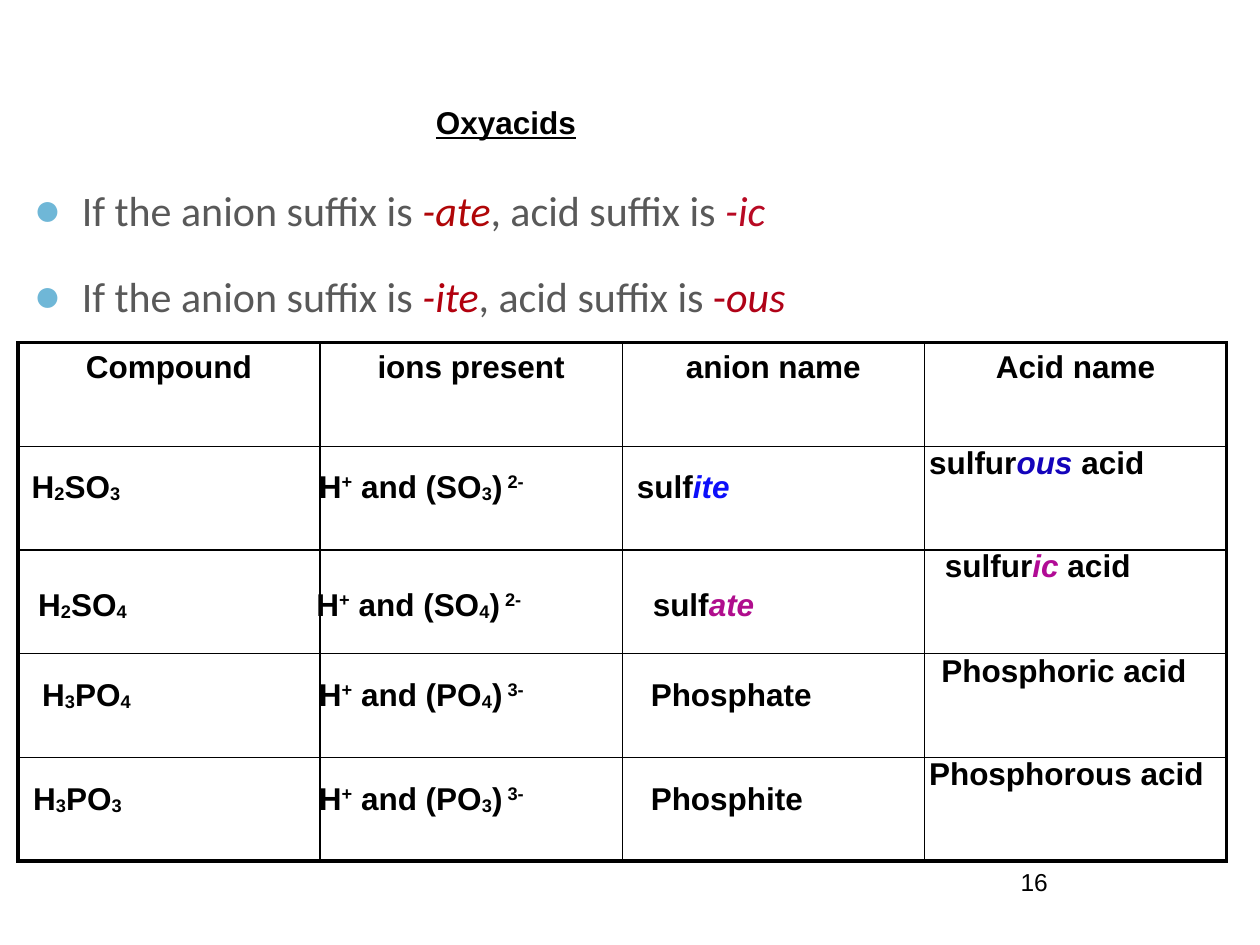
import pptx
import pptx.util
import pptx.dml.color
import pptx.enum.text
import pptx.oxml
import pptx.oxml.ns
from pptx.util import Cm, Pt

RGBColor = pptx.dml.color.RGBColor
ALIGN = pptx.enum.text.PP_ALIGN
BLACK = RGBColor(0x00, 0x00, 0x00)
GREY = RGBColor(0x59, 0x59, 0x59)
RED_ATE = RGBColor(0xB0, 0x06, 0x08)
RED_IC = RGBColor(0xB8, 0x09, 0x23)
RED_ITE = RGBColor(0xB2, 0x00, 0x0E)
RED_OUS = RGBColor(0xB0, 0x02, 0x17)
BULLET_BLUE = RGBColor(0x6F, 0xB7, 0xD7)
BLUE_ITE = RGBColor(0x0D, 0x0F, 0xFA)
BLUE_OUS = RGBColor(0x14, 0x04, 0xBB)
PINK_ATE = RGBColor(0xB0, 0x0D, 0x8D)
PINK_IC = RGBColor(0xB1, 0x0B, 0x95)
SUB, SUP = -6000, 32000
NAMESPACE = pptx.oxml.ns.nsdecls("a")


def add_run(paragraph, text, size=18, font="Arial", color=BLACK,
            bold=True, italic=False, baseline=0):
    run = paragraph.add_run()
    run.text = text
    run.font.size = Pt(size)
    run.font.name = font
    run.font.color.rgb = color
    run.font.bold = bold
    run.font.italic = italic
    if baseline:
        run.font._element.set("baseline", str(baseline))
    return run


def add_label(left, top, width, height):
    """Add a text box with tight insets and return its first paragraph."""
    frame = slide.shapes.add_textbox(Cm(left), Cm(top), Cm(width), Cm(height)).text_frame
    frame.word_wrap = True
    frame.margin_left = frame.margin_right = Cm(0.1)
    frame.margin_top = frame.margin_bottom = 0
    return frame.paragraphs[0]


presentation = pptx.Presentation()
presentation.slide_width = Cm(25.4)
presentation.slide_height = Cm(19.05)
slide = presentation.slides.add_slide(presentation.slide_layouts[6])

# Naming rules
rules = slide.shapes.add_textbox(Cm(0.43), Cm(3.6), Cm(24.49), Cm(15.24)).text_frame
rules.word_wrap = True
rules.margin_right = Cm(0.36)
suffix_rules = [
    [("-ate", RED_ATE, True), (", acid suffix is ", GREY, False), ("-ic", RED_IC, True)],
    [("-ite", RED_ITE, True), (", acid suffix is ", GREY, False),
     ("-", RED_OUS, False), ("ous", RED_OUS, True)],
]
for index, endings in enumerate(suffix_rules):
    rule = rules.add_paragraph() if index else rules.paragraphs[0]
    rule.space_before = Pt(20)
    properties = rule._p.get_or_add_pPr()
    properties.set("marL", str(Cm(0.97)))
    properties.set("indent", str(-Cm(0.97)))
    for bullet_xml in (
        f'<a:buClr {NAMESPACE}><a:srgbClr val="{BULLET_BLUE}"/></a:buClr>',
        f'<a:buSzPct {NAMESPACE} val="110000"/>',
        f'<a:buFont {NAMESPACE} typeface="Arial"/>',
        f'<a:buChar {NAMESPACE} char="●"/>',
    ):
        properties.append(pptx.oxml.parse_xml(bullet_xml))
    for text, color, italic in [("If the anion suffix is ", GREY, False)] + endings:
        add_run(rule, text, 24, "Calibri", color, False, italic)

# Page number and title
page_number = add_label(20.25, 17.48, 1.2, 0.7)
page_number.alignment = ALIGN.CENTER
add_run(page_number, "16", 14, bold=False)
add_run(add_label(8.69, 2.08, 6.81, 1.24), "Oxyacids").font.underline = True

# Grid with a heavy outer frame
headings = ["Compound", "ions present", "anion name", "Acid name"]
ROWS, COLUMNS = 5, len(headings)
grid = slide.shapes.add_table(ROWS, COLUMNS, Cm(0.36), Cm(6.91), Cm(24.37), Cm(10.45)).table
grid.first_row = grid.horz_banding = False
for row in range(ROWS):
    for column in range(COLUMNS):
        cell = grid.cell(row, column)
        cell.margin_left = cell.margin_right = Cm(0.15)
        cell.margin_top = cell.margin_bottom = Cm(0.15)
        if row == 0:
            heading = cell.text_frame.paragraphs[0]
            heading.alignment = ALIGN.CENTER
            add_run(heading, headings[column])
        borders = cell._tc.get_or_add_tcPr()
        for side, outer in (("L", column == 0), ("R", column == COLUMNS - 1),
                            ("T", row == 0), ("B", row == ROWS - 1)):
            borders.append(pptx.oxml.parse_xml(
                f'<a:ln{side} {NAMESPACE} w="{Pt(2.25 if outer else 1)}"><a:solidFill>'
                f'<a:srgbClr val="{BLACK}"/></a:solidFill></a:ln{side}>'))
        cell.fill.background()

# Each acid: hydrogens, element, oxygens, label top, acid top, column lefts, names
acids = [
    ("2", "S", "3", 9.42, 8.93, (0.54, 6.33, 12.74, 18.63),
     [("sulf", BLACK), ("ite", BLUE_ITE)],
     [("sulfur", BLACK), ("ous", BLUE_OUS), (" acid", BLACK)]),
    ("2", "S", "4", 11.79, 11.0, (0.67, 6.28, 13.06, 18.95),
     [("sulf", BLACK), ("ate", PINK_ATE)],
     [("sulfur", BLACK), ("ic", PINK_IC), (" acid", BLACK)]),
    ("3", "P", "4", 13.61, 13.13, (0.75, 6.33, 13.02, 18.88),
     [("Phosphate", BLACK)], [("Phosphoric acid", BLACK)]),
    ("3", "P", "3", 15.7, 15.21, (0.57, 6.33, 13.02, 18.63),
     [("Phosphite", BLACK)], [("Phosphorous acid", BLACK)]),
]
for hydrogens, element, oxygens, top, acid_top, lefts, anion_name, acid_name in acids:
    compound = [("H", 0), (hydrogens, SUB), (element + "O", 0), (oxygens, SUB)]
    ions = [("H", 0), ("+", SUP), (f" and ({element}O", 0), (oxygens, SUB),
            (")", 0), (f" {hydrogens}-", SUP)]
    for formula, left, width in ((compound, lefts[0], 5.3), (ions, lefts[1], 6.3)):
        label = add_label(left, top, width, 1.24)
        for text, baseline in formula:
            add_run(label, text, baseline=baseline)
    for name, left, name_top, width, height in (
            (anion_name, lefts[2], top, 5.25, 1.24),
            (acid_name, lefts[3], acid_top, 6.45, 2.24)):
        label = add_label(left, name_top, width, height)
        for text, color in name:
            add_run(label, text, color=color, italic=color != BLACK)

presentation.save("out.pptx")
